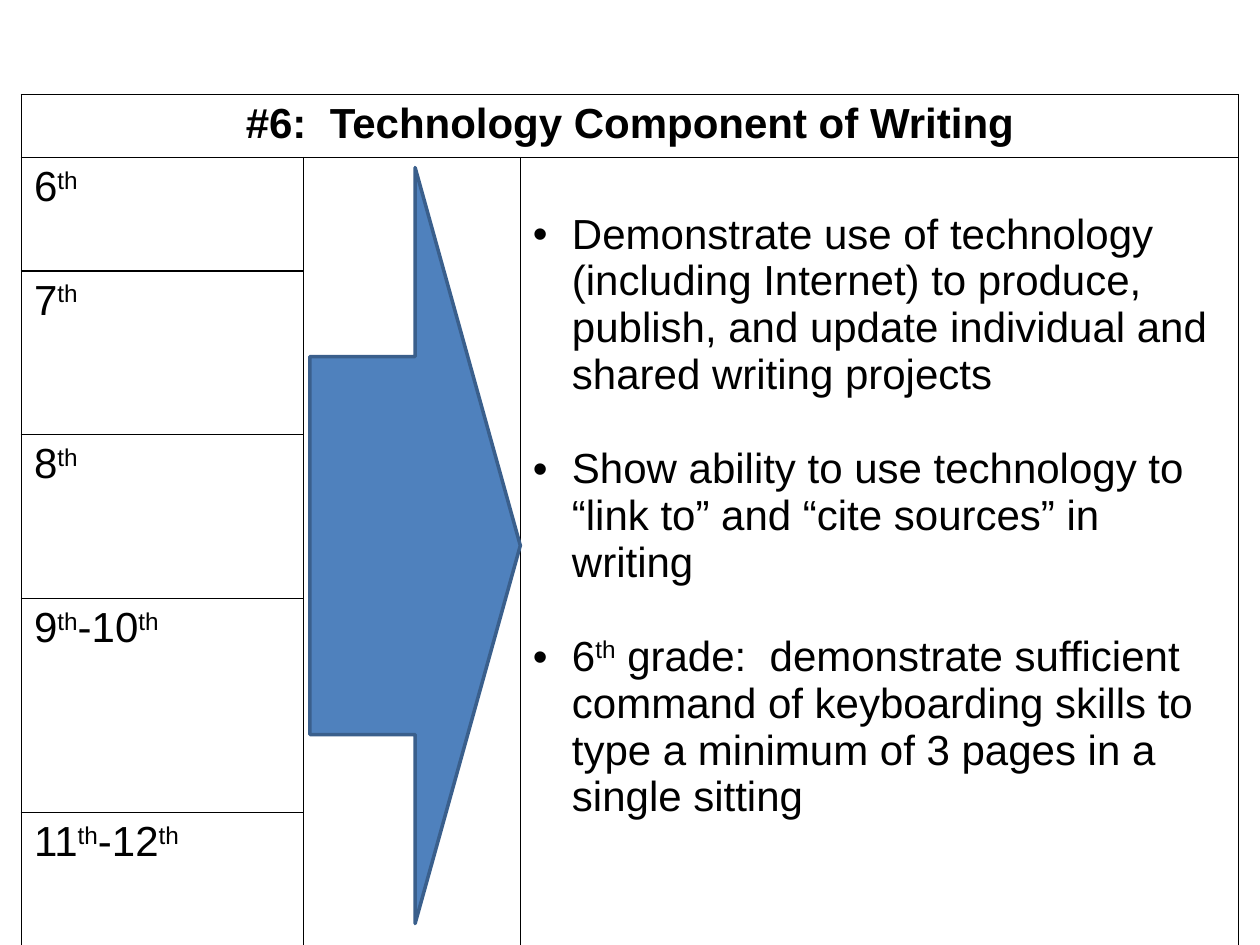
from lxml.etree import SubElement
from pptx import Presentation
from pptx.dml.color import RGBColor
from pptx.enum.shapes import MSO_SHAPE as Shape
from pptx.enum.text import PP_ALIGN as Align
from pptx.oxml.ns import qn
from pptx.util import Emu, Inches, Pt

COLORS = {"ink": "000000", "paper": "FFFFFF", "arrow": "4F81BD", "edge": "3A5F8C"}
FONT, TEXT_SIZE, LINE_GAP = "Arial", 24, 27
LEFT, TOP = 0.17, 0.75
COLUMNS = [2.24, 1.72, 5.7]
ROWS = [0.5, 0.9, 1.3, 1.3, 1.7, 1.1]

TITLE = "#6:  Technology Component of Writing"
# Text between ^ marks is superscript
GRADES = ["6^th^", "7^th^", "8^th^", "9^th^-10^th^", "11^th^-12^th^"]
SKILLS = [
    "Demonstrate use of technology (including Internet) to produce, publish, "
    "and update individual and shared writing projects",
    "Show ability to use technology to “link to” and “cite sources” in writing",
    "6^th^ grade:  demonstrate sufficient command of keyboarding skills to "
    "type a minimum of 3 pages in a single sitting",
]


def color(name):
    return RGBColor.from_string(COLORS[name])


def add_bullet(para, indent=0.31):
    props = para._p.get_or_add_pPr()
    props.set("marL", str(Inches(indent)))
    props.set("indent", str(-Inches(indent)))
    SubElement(props, qn("a:buFont"), typeface=FONT)
    SubElement(props, qn("a:buChar"), char="•")


def write(para, text, bold=False, align=Align.LEFT, bullet=False, before=None):
    para.alignment = align
    if before is not None:
        para.space_before = Pt(before)
    if bullet:
        add_bullet(para)
    for index, piece in enumerate(text.split("^")):
        if not piece:
            continue
        span = para.add_run()
        span.text = piece
        font = span.font
        font.name, font.size, font.bold = FONT, Pt(TEXT_SIZE), bold
        font.color.rgb = color("ink")
        if index % 2:
            font._element.set("baseline", "30000")


def style_cell(cell):
    props = cell._tc.get_or_add_tcPr()
    for side in ("a:lnL", "a:lnR", "a:lnT", "a:lnB"):
        line = SubElement(props, qn(side), w=str(Pt(1)))
        fill = SubElement(line, qn("a:solidFill"))
        SubElement(fill, qn("a:srgbClr"), val=COLORS["ink"])
    cell.fill.solid()
    cell.fill.fore_color.rgb = color("paper")


def add_grid(page):
    frame = page.shapes.add_table(
        len(ROWS), len(COLUMNS), Inches(LEFT), Inches(TOP),
        Inches(sum(COLUMNS)), Inches(sum(ROWS)))
    table = frame.table
    for column, width in zip(table.columns, COLUMNS):
        column.width = Inches(width)
    for row, height in zip(table.rows, ROWS):
        row.height = Inches(height)
    for cell in table.iter_cells():
        style_cell(cell)

    # Title across the top, arrow and skills columns down the side
    last = len(ROWS) - 1
    table.cell(0, 0).merge(table.cell(0, 2))
    for column in (1, 2):
        table.cell(1, column).merge(table.cell(last, column))
    return table


def add_arrow(page):
    arrow = page.shapes.add_shape(
        Shape.RIGHT_ARROW, Inches(2.46), Inches(1.33), Inches(1.67), Inches(6))
    arrow.shadow.inherit = False
    arrow.fill.solid()
    arrow.fill.fore_color.rgb = color("arrow")
    arrow.line.color.rgb = color("edge")
    arrow.line.width = Pt(2)


def main():
    deck = Presentation()
    deck.slide_width, deck.slide_height = Inches(10), Inches(7.5)
    page = deck.slides.add_slide(deck.slide_layouts[6])

    table = add_grid(page)
    write(table.cell(0, 0).text_frame.paragraphs[0], TITLE,
          bold=True, align=Align.CENTER)
    for row, grade in enumerate(GRADES, start=1):
        write(table.cell(row, 0).text_frame.paragraphs[0], grade)

    # Skills start one line below the top of their cell
    skills = table.cell(1, 2)
    skills.margin_top = Emu(Inches(0.05) + Pt(LINE_GAP))
    box = skills.text_frame
    for index, skill in enumerate(SKILLS):
        para = box.add_paragraph() if index else box.paragraphs[0]
        write(para, skill, bullet=True, before=LINE_GAP if index else None)

    add_arrow(page)
    deck.save("out.pptx")


if __name__ == "__main__":
    main()
